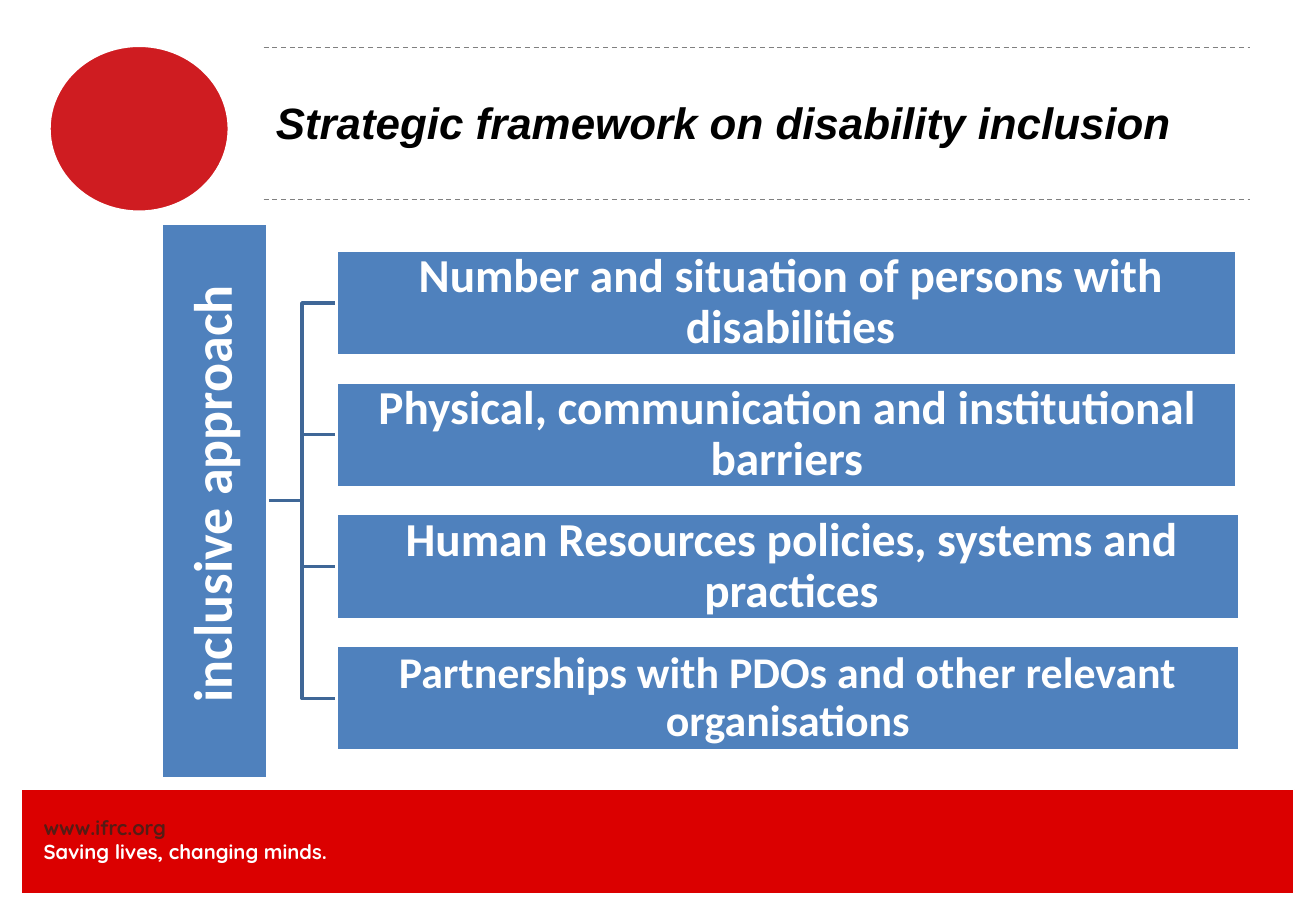
from dataclasses import dataclass

from pptx import Presentation
from pptx.dml.color import RGBColor
from pptx.enum.dml import MSO_LINE
from pptx.enum.shapes import MSO_CONNECTOR, MSO_SHAPE
from pptx.enum.text import MSO_ANCHOR, MSO_AUTO_SIZE, PP_ALIGN
from pptx.oxml.ns import qn
from pptx.shapes.autoshape import Shape
from pptx.slide import Slide
from pptx.text.text import TextFrame
from pptx.util import Emu, Pt
from lxml.etree import SubElement

EMU_PER_PX = 4572


@dataclass(frozen=True)
class Theme:
    white: str = "FFFFFF"
    black: str = "000000"
    footer_red: str = "DB0000"
    emblem_red: str = "CF1C21"
    address_brown: str = "551C15"
    rule_grey: str = "808080"
    panel_blue: str = "4F81BD"
    branch_blue: str = "3F6797"
    title_font: str = "Arial"
    panel_font: str = "Calibri"
    footer_font: str = "Quicksand"
    title_size: int = 26
    approach_size: int = 32
    topic_size: int = 28
    small_topic_size: int = 26
    footer_size: int = 12


@dataclass(frozen=True)
class Box:
    left: int
    top: int
    width: int
    height: int


@dataclass(frozen=True)
class Topic:
    text: str
    width: int
    size: int
    left_inset: int
    inset: int


THEME = Theme()
TOPICS = [
    Topic("Number and situation of persons with disabilities",
          1482, THEME.topic_size, 14, 2),
    Topic("Physical, communication and institutional barriers",
          1482, THEME.topic_size, 4, 4),
    Topic("Human Resources policies, systems and practices",
          1486, THEME.topic_size, 13, 2),
    Topic("Partnerships with PDOs and other relevant organisations",
          1486, THEME.small_topic_size, 4, 4),
]
TOPIC_LEFT, TOPIC_TOP, TOPIC_PITCH, PANEL_HEIGHT = 554, 412, 217, 174
TRUNK_LEFT, TRUNK_BEND, TRUNK_Y = 440, 497, 824
RULE_LEFT, RULE_RIGHT, RULE_YS = 434, 2058, (78, 328)


def px(length: int) -> Emu:
    return Emu(length * EMU_PER_PX)


def rgb(colour: str) -> RGBColor:
    return RGBColor.from_string(colour)


def place(box: Box) -> tuple[Emu, Emu, Emu, Emu]:
    return px(box.left), px(box.top), px(box.width), px(box.height)


def set_insets(frame: TextFrame, left: int, rest: int) -> None:
    frame.margin_left = px(left)
    frame.margin_top = frame.margin_right = frame.margin_bottom = px(rest)


def write_text(frame: TextFrame, text: str, *, font: str, size: int, colour: str,
               italic: bool = False, align: PP_ALIGN = PP_ALIGN.LEFT,
               spacing: float = 1.0, anchor: MSO_ANCHOR = MSO_ANCHOR.TOP,
               append: bool = False) -> None:
    frame.word_wrap = True
    frame.auto_size = MSO_AUTO_SIZE.NONE
    frame.vertical_anchor = anchor
    paragraph = frame.add_paragraph() if append else frame.paragraphs[0]
    paragraph.alignment = align
    paragraph.line_spacing = spacing
    run = paragraph.add_run()
    run.text = text
    run.font.name = font
    run.font.size = Pt(size)
    run.font.bold = True
    run.font.italic = italic
    run.font.color.rgb = rgb(colour)


def draw_shape(slide: Slide, preset: MSO_SHAPE, box: Box, fill: str,
               line_width: float) -> Shape:
    drawn = slide.shapes.add_shape(preset, *place(box))
    drawn.shadow.inherit = False
    drawn.fill.solid()
    drawn.fill.fore_color.rgb = rgb(fill)
    drawn.line.color.rgb = rgb(THEME.white)
    drawn.line.width = Pt(line_width)
    return drawn


def draw_panel(slide: Slide, box: Box, text: str, size: int, left_inset: int,
               inset: int, rotation: int = 0) -> None:
    panel = draw_shape(slide, MSO_SHAPE.RECTANGLE, box, THEME.panel_blue, 2)
    panel.rotation = rotation
    set_insets(panel.text_frame, left_inset, inset)
    write_text(panel.text_frame, text, font=THEME.panel_font, size=size,
               colour=THEME.white, align=PP_ALIGN.CENTER, spacing=0.9,
               anchor=MSO_ANCHOR.MIDDLE)


def draw_rule(slide: Slide, y: int) -> None:
    rule = slide.shapes.add_connector(
        MSO_CONNECTOR.STRAIGHT, px(RULE_LEFT), px(y), px(RULE_RIGHT), px(y))
    rule.line.color.rgb = rgb(THEME.rule_grey)
    rule.line.width = Pt(0.75)
    rule.line.dash_style = MSO_LINE.DASH
    SubElement(rule._element.spPr, qn("a:effectLst"))


def draw_branch(slide: Slide, y: int) -> None:
    outline = slide.shapes.build_freeform(TRUNK_LEFT, TRUNK_Y, scale=EMU_PER_PX)
    outline.add_line_segments(
        [(TRUNK_BEND, TRUNK_Y), (TRUNK_BEND, y), (TOPIC_LEFT, y)], close=False)
    branch = outline.convert_to_shape()
    branch.shadow.inherit = False
    branch.fill.background()
    branch.line.color.rgb = rgb(THEME.branch_blue)
    branch.line.width = Pt(2)


def draw_footer(slide: Slide) -> None:
    draw_shape(slide, MSO_SHAPE.RECTANGLE, Box(36, 1300, 2094, 172),
               THEME.footer_red, 0.75)
    footer = slide.shapes.add_textbox(*place(Box(72, 1342, 740, 80))).text_frame
    set_insets(footer, 0, 0)
    write_text(footer, "www.ifrc.org", font=THEME.footer_font,
               size=THEME.footer_size, colour=THEME.address_brown)
    write_text(footer, "Saving lives, changing minds.", font=THEME.footer_font,
               size=THEME.footer_size, colour=THEME.white, append=True)


def draw_title(slide: Slide) -> None:
    title = slide.shapes.title
    title.left, title.top, title.width, title.height = place(Box(434, 76, 1624, 250))
    write_text(title.text_frame, "Strategic framework on disability inclusion",
               font=THEME.title_font, size=THEME.title_size, colour=THEME.black,
               italic=True, anchor=MSO_ANCHOR.MIDDLE)


def main() -> None:
    presentation = Presentation()
    presentation.slide_width, presentation.slide_height = px(2166), px(1500)
    slide = presentation.slides.add_slide(presentation.slide_layouts[5])
    draw_footer(slide)
    draw_shape(slide, MSO_SHAPE.OVAL, Box(80, 74, 298, 276), THEME.emblem_red, 2.5)
    for y in RULE_YS:
        draw_rule(slide, y)
    draw_title(slide)
    topic_tops = [TOPIC_TOP + TOPIC_PITCH * row for row in range(len(TOPICS))]
    for top in reversed(topic_tops):
        draw_branch(slide, top + PANEL_HEIGHT // 2)
    draw_panel(slide, Box(-104, 738, 914, PANEL_HEIGHT), "inclusive approach",
               THEME.approach_size, 30, 6, rotation=270)
    for topic, top in zip(TOPICS, topic_tops):
        draw_panel(slide, Box(TOPIC_LEFT, top, topic.width, PANEL_HEIGHT),
                   topic.text, topic.size, topic.left_inset, topic.inset)
    presentation.save("out.pptx")


if __name__ == "__main__":
    main()
